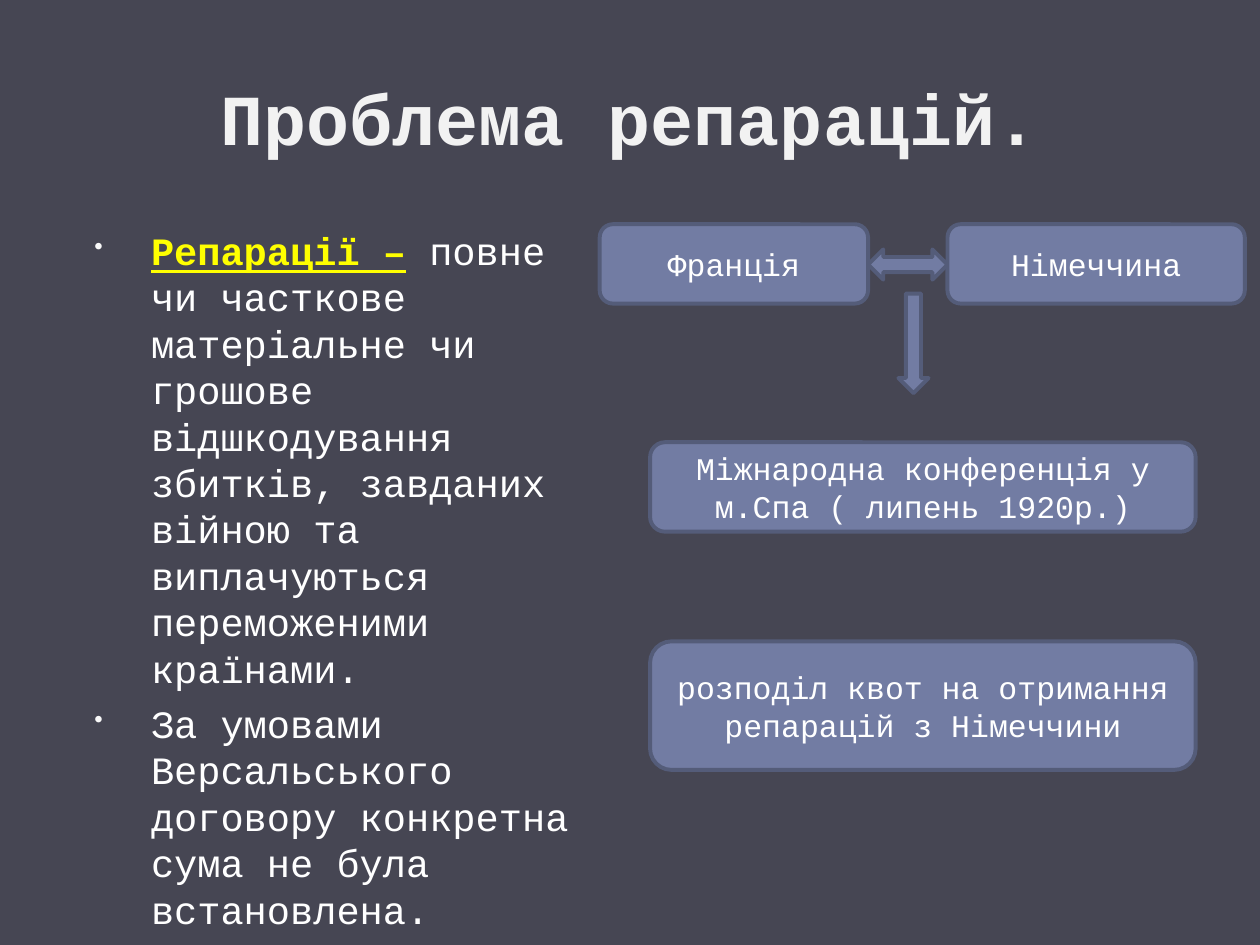
from lxml.etree import SubElement
from pptx import Presentation
from pptx.dml.color import RGBColor
from pptx.enum.shapes import MSO_SHAPE
from pptx.enum.text import MSO_ANCHOR, PP_ALIGN
from pptx.oxml.ns import qn
from pptx.util import Inches, Pt

COLORS = {name: RGBColor.from_string(value) for name, value in {
    "background": "464653",
    "title": "F2F2F2",
    "text": "FFFFFF",
    "term": "FFFF00",
    "bullet": "F9F9F9",
    "fill": "727CA3",
    "line": "545C79",
}.items()}
FONT = "Courier New"

presentation = Presentation()
presentation.slide_width = Inches(10)
presentation.slide_height = Inches(7.5)
CELL = presentation.slide_width / 100
slide = presentation.slides.add_slide(presentation.slide_layouts[6])
slide.background.fill.solid()
slide.background.fill.fore_color.rgb = COLORS["background"]


def grid(*cells):
    return [round(cell * CELL) for cell in cells]


def style(paragraph, size, color, alignment):
    paragraph.alignment = alignment
    paragraph.font.name = FONT
    paragraph.font.size = Pt(size)
    paragraph.font.color.rgb = COLORS[color]


title = slide.shapes.add_textbox(*grid(5, 3, 90, 12.5)).text_frame
title.word_wrap = True
title.vertical_anchor = MSO_ANCHOR.MIDDLE
title.text = "Проблема репарацій."
style(title.paragraphs[0], 41, "title", PP_ALIGN.CENTER)
title.paragraphs[0].font.bold = True

body = slide.shapes.add_textbox(*grid(5, 17.5, 44.2, 49.5)).text_frame
body.word_wrap = True
points = [
    ("Репарації –", " повне чи часткове матеріальне чи грошове відшкодування "
     "збитків, завданих війною та виплачуються переможеними країнами."),
    ("", "За умовами Версальського договору конкретна сума не була встановлена."),
]
for index, (term, description) in enumerate(points):
    paragraph = body.add_paragraph() if index else body.paragraphs[0]
    properties = paragraph._p.get_or_add_pPr()
    properties.set("marL", str(Inches(0.6)))
    properties.set("indent", str(Inches(-0.45)))
    bullet_color = SubElement(properties, qn("a:buClr"))
    SubElement(bullet_color, qn("a:srgbClr")).set("val", str(COLORS["bullet"]))
    SubElement(properties, qn("a:buSzPct")).set("val", "65000")
    SubElement(properties, qn("a:buChar")).set("char", "•")
    style(paragraph, 22.1, "text", PP_ALIGN.LEFT)
    if index:
        paragraph.space_before = Pt(4.9)
    if term:
        run = paragraph.add_run()
        run.text = term
        run.font.bold = True
        run.font.underline = True
        run.font.color.rgb = COLORS["term"]
    paragraph.add_run().text = description

box = MSO_SHAPE.ROUNDED_RECTANGLE
diagram = [
    (box, (47.6, 17.8, 21.3, 6.3), "Франція"),
    (box, (75.2, 17.8, 23.6, 6.3), "Німеччина"),
    (MSO_SHAPE.LEFT_RIGHT_ARROW, (68.9, 19.8, 6.3, 2.4), ""),
    (MSO_SHAPE.DOWN_ARROW, (71.3, 23.3, 2.4, 7.9), ""),
    (box, (51.6, 35.1, 43.3, 7.1), "Міжнародна конференція у м.Спа ( липень 1920р.)"),
    (box, (51.6, 50.9, 43.3, 10.2), "розподіл квот на отримання репарацій з Німеччини"),
]
for kind, cells, label in diagram:
    shape = slide.shapes.add_shape(kind, *grid(*cells))
    shape.shadow.inherit = False
    shape.fill.solid()
    shape.fill.fore_color.rgb = COLORS["fill"]
    shape.line.color.rgb = COLORS["line"]
    shape.line.width = Pt(2.25)
    if label:
        shape.text_frame.word_wrap = True
        shape.text_frame.vertical_anchor = MSO_ANCHOR.MIDDLE
        shape.text_frame.text = label
        style(shape.text_frame.paragraphs[0], 18, "text", PP_ALIGN.CENTER)

presentation.save("out.pptx")
